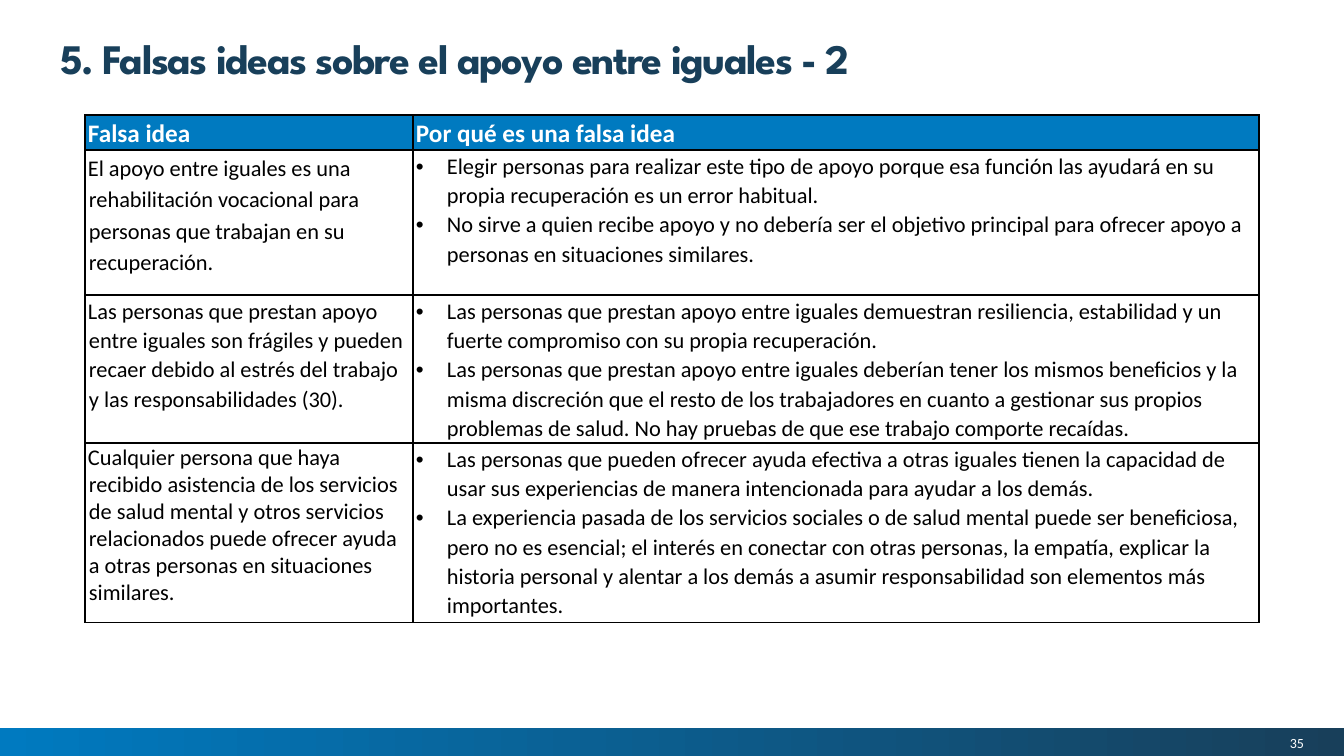
import lxml.etree
import pptx
import pptx.dml.color
import pptx.enum.shapes
import pptx.enum.text
import pptx.oxml.ns
import pptx.util

EMU_PER_PX = 914400 / 100.8
SLIDE_WIDTH, SLIDE_HEIGHT = 1344, 756

BLUE = pptx.dml.color.RGBColor(0x00, 0x7A, 0xC0)
NAVY = pptx.dml.color.RGBColor(0x18, 0x3F, 0x5A)
WHITE = pptx.dml.color.RGBColor(0xFF, 0xFF, 0xFF)
BLACK = pptx.dml.color.RGBColor(0x00, 0x00, 0x00)

TITLE_FONT = "League Spartan"
BODY_FONT = "Calibri"
BULLET_INDENT = 31

TITLE = "5. Falsas ideas sobre el apoyo entre iguales - 2"
PAGE_NUMBER = "35"
COLUMN_WIDTHS = [328, 846]
ROW_HEIGHTS = [35, 145, 148, 180]
HEADERS = ["Falsa idea", "Por qué es una falsa idea"]
FALSE_IDEAS = [
    (
        "El apoyo entre iguales es una rehabilitación vocacional para personas que trabajan en su recuperación.",
        1.15,
        [
            "Elegir personas para realizar este tipo de apoyo porque esa función las ayudará en su propia recuperación es un error habitual.",
            "No sirve a quien recibe apoyo y no debería ser el objetivo principal para ofrecer apoyo a personas en situaciones similares.",
        ],
    ),
    (
        "Las personas que prestan apoyo entre iguales son frágiles y pueden recaer debido al estrés del trabajo y las responsabilidades (30).",
        1.07,
        [
            "Las personas que prestan apoyo entre iguales demuestran resiliencia, estabilidad y un fuerte compromiso con su propia recuperación.",
            "Las personas que prestan apoyo entre iguales deberían tener los mismos beneficios y la misma discreción que el resto de los trabajadores en cuanto a gestionar sus propios problemas de salud. No hay pruebas de que ese trabajo comporte recaídas.",
        ],
    ),
    (
        "Cualquier persona que haya recibido asistencia de los servicios de salud mental y otros servicios relacionados puede ofrecer ayuda a otras personas en situaciones similares.",
        0.99,
        [
            "Las personas que pueden ofrecer ayuda efectiva a otras iguales tienen la capacidad de usar sus experiencias de manera intencionada para ayudar a los demás.",
            "La experiencia pasada de los servicios sociales o de salud mental puede ser beneficiosa, pero no es esencial; el interés en conectar con otras personas, la empatía, explicar la historia personal y alentar a los demás a asumir responsabilidad son elementos más importantes.",
        ],
    ),
]


def px(length):
    return pptx.util.Emu(round(length * EMU_PER_PX))


def add_element(parent, tag, **attributes):
    return lxml.etree.SubElement(parent, pptx.oxml.ns.qn(tag), attributes)


def add_run(paragraph, text, size, color, font=BODY_FONT, bold=False):
    run = paragraph.add_run()
    run.text = text
    run.font.name = font
    run.font.size = pptx.util.Pt(size)
    run.font.bold = bold
    run.font.color.rgb = color
    return run


def clear_margins(frame):
    frame.margin_left = frame.margin_right = 0
    frame.margin_top = frame.margin_bottom = 0


def add_title(slide, left, top, width, height):
    title = slide.shapes.title
    title.left, title.top = px(left), px(top)
    title.width, title.height = px(width), px(height)
    frame = title.text_frame
    frame.word_wrap = True
    frame.auto_size = pptx.enum.text.MSO_AUTO_SIZE.NONE
    frame.vertical_anchor = pptx.enum.text.MSO_ANCHOR.TOP
    paragraph = frame.paragraphs[0]
    paragraph.alignment = pptx.enum.text.PP_ALIGN.LEFT
    paragraph.line_spacing = pptx.util.Pt(33)
    run = add_run(paragraph, TITLE, 30, NAVY, TITLE_FONT, True)
    run.font._element.set("spc", "-100")


def add_footer(slide, left, top, width, height):
    band = slide.shapes.add_shape(
        pptx.enum.shapes.MSO_SHAPE.RECTANGLE, px(left), px(top), px(width), px(height)
    )
    band.shadow.inherit = False
    band.line.fill.background()
    band.fill.gradient()
    band.fill.gradient_angle = 0
    for stop, color, position in zip(band.fill.gradient_stops, (BLUE, NAVY), (0, 1)):
        stop.color.rgb = color
        stop.position = position

    number = slide.shapes.add_textbox(px(left + width - 221), px(top + 3), px(181), px(24))
    frame = number.text_frame
    frame.word_wrap = True
    frame.vertical_anchor = pptx.enum.text.MSO_ANCHOR.MIDDLE
    clear_margins(frame)
    paragraph = frame.paragraphs[0]
    paragraph.alignment = pptx.enum.text.PP_ALIGN.RIGHT
    add_run(paragraph, PAGE_NUMBER, 10, WHITE)


def format_cell(cell, fill_color):
    clear_margins(cell)
    cell.margin_left, cell.margin_right, cell.margin_top = px(3), px(2), px(1)
    properties = cell._tc.get_or_add_tcPr()
    for side in ("a:lnL", "a:lnR", "a:lnT", "a:lnB"):
        border = add_element(properties, side, w=str(pptx.util.Pt(1)))
        add_element(add_element(border, "a:solidFill"), "a:srgbClr", val=str(BLACK))
    if fill_color is None:
        cell.fill.background()
    else:
        cell.fill.solid()
        cell.fill.fore_color.rgb = fill_color


def fill_cell(cell, texts, line_spacing=1.07, bulleted=False, header=False):
    format_cell(cell, BLUE if header else None)
    frame = cell.text_frame
    for index, text in enumerate(texts):
        paragraph = frame.add_paragraph() if index else frame.paragraphs[0]
        indent = px(BULLET_INDENT if bulleted else 1)
        properties = paragraph._p.get_or_add_pPr()
        properties.set("marL", str(indent))
        properties.set("indent", str(-indent))
        if bulleted:
            add_element(properties, "a:buFont", typeface="Arial")
            add_element(properties, "a:buChar", char="•")
        paragraph.line_spacing = line_spacing
        add_run(paragraph, text, 18 if header else 16, WHITE if header else BLACK, bold=header)


def add_ideas_table(slide, left, top, width, height):
    table = slide.shapes.add_table(
        len(ROW_HEIGHTS), len(COLUMN_WIDTHS), px(left), px(top), px(width), px(height)
    ).table
    table.first_row = False
    table.horz_banding = False
    for column, column_width in zip(table.columns, COLUMN_WIDTHS):
        column.width = px(column_width)
    for row, row_height in zip(table.rows, ROW_HEIGHTS):
        row.height = px(row_height)
    for column, header in enumerate(HEADERS):
        fill_cell(table.cell(0, column), [header], header=True)
    for row, (idea, line_spacing, reasons) in enumerate(FALSE_IDEAS, start=1):
        fill_cell(table.cell(row, 0), [idea], line_spacing)
        fill_cell(table.cell(row, 1), reasons, bulleted=True)


def main():
    presentation = pptx.Presentation()
    presentation.slide_width = px(SLIDE_WIDTH)
    presentation.slide_height = px(SLIDE_HEIGHT)
    slide = presentation.slides.add_slide(presentation.slide_layouts[5])
    add_footer(slide, 0, 728, SLIDE_WIDTH, 28)
    add_title(slide, 50, 32, 1080, 47)
    add_ideas_table(slide, 85, 115, sum(COLUMN_WIDTHS), sum(ROW_HEIGHTS))
    presentation.save("out.pptx")


if __name__ == "__main__":
    main()
